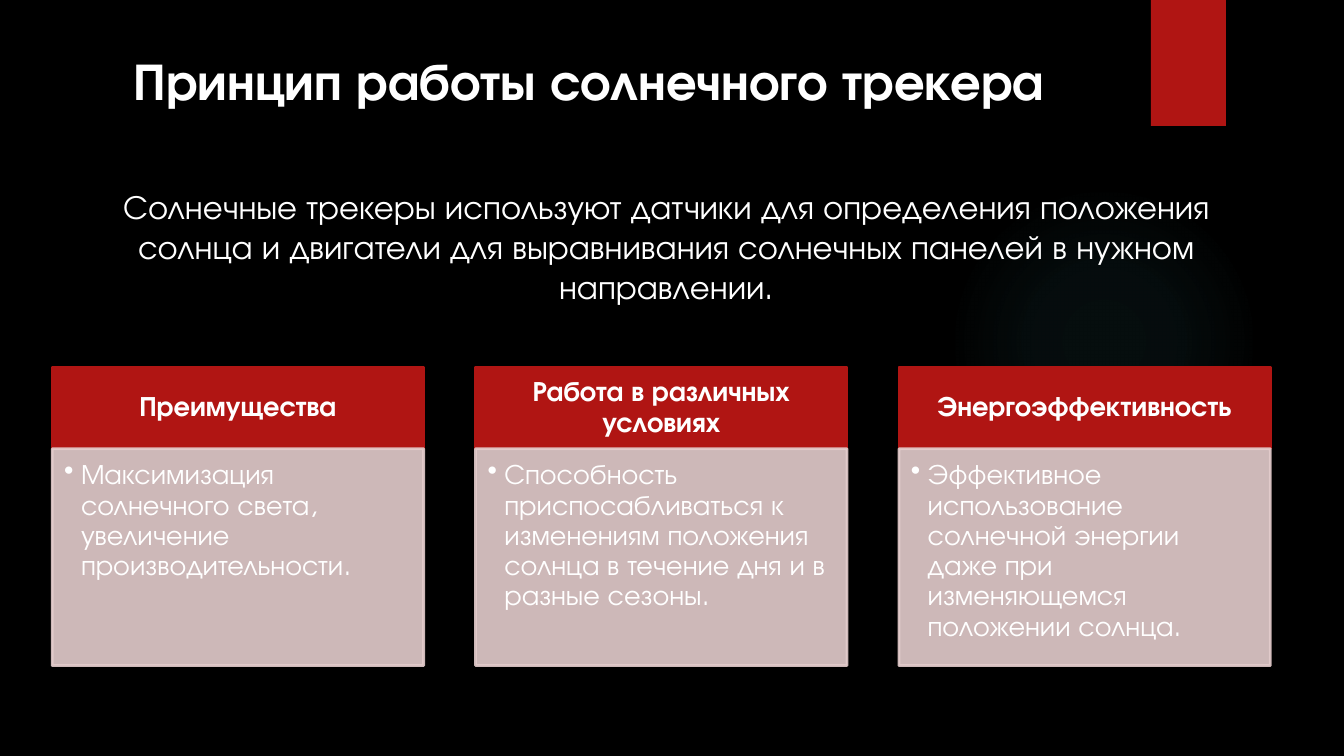
from lxml import etree
from pptx import Presentation
from pptx.dml.color import RGBColor
from pptx.enum import shapes, text
from pptx.oxml import parse_xml
from pptx.oxml.ns import nsdecls, qn
from pptx.util import Pt

FONT = "TeX Gyre Adventor"
RED, PINK, WHITE, GLOW = "B01513", "E4CCCC", "FFFFFF", "50B9C1"


def color(value):
    return RGBColor.from_string(value)


def write(frame, words, size, bold=False, align=text.PP_ALIGN.CENTER):
    frame.word_wrap = True
    paragraph = frame.paragraphs[0]
    paragraph.alignment = align
    run = paragraph.add_run()
    run.text = words
    run.font.name, run.font.size, run.font.bold = FONT, Pt(size), bold
    run.font.color.rgb = color(WHITE)
    return paragraph


deck = Presentation()
deck.slide_width, deck.slide_height = Pt(720), Pt(405)
slide = deck.slides.add_slide(deck.slide_layouts[5])
slide.background.fill.solid()
slide.background.fill.fore_color.rgb = color("000000")

# Faint round glow
glow = slide.shapes.add_shape(shapes.MSO_SHAPE.OVAL, Pt(508.3), Pt(99.4), Pt(166.3), Pt(166.3))
glow.shadow.inherit = False
glow.line.fill.background()
glow.fill.background()
stops = "".join(
    f'<a:gs pos="{place * 1000}"><a:srgbClr val="{GLOW}"><a:alpha val="{alpha * 1000}"/></a:srgbClr></a:gs>'
    for place, alpha in [(0, 7), (36, 6), (69, 0)])
gradient = parse_xml(
    f'<a:gradFill {nsdecls("a")}><a:gsLst>{stops}</a:gsLst><a:path path="circle">'
    '<a:fillToRect l="50000" t="50000" r="50000" b="50000"/></a:path></a:gradFill>')
glow_props = glow._element.spPr
glow_props.replace(glow_props.find(qn("a:noFill")), gradient)

# Red ribbon
ribbon = slide.shapes.add_shape(shapes.MSO_SHAPE.RECTANGLE, Pt(616.5), 0, Pt(40.3), Pt(67.5))
ribbon.shadow.inherit = False
ribbon.fill.solid()
ribbon.fill.fore_color.rgb = color(RED)
ribbon.line.fill.background()

# Title and description
title = slide.shapes.title
title.left, title.top, title.width, title.height = Pt(16.6), Pt(22.3), Pt(598.3), Pt(41)
title.text_frame.vertical_anchor = text.MSO_ANCHOR.TOP
title.text_frame.auto_size = text.MSO_AUTO_SIZE.SHAPE_TO_FIT_TEXT
write(title.text_frame, "Принцип работы солнечного трекера", 28, bold=True)

description = slide.shapes.add_textbox(Pt(33.8), Pt(95.8), Pt(646.6), Pt(51))
description.text_frame.auto_size = text.MSO_AUTO_SIZE.SHAPE_TO_FIT_TEXT
write(description.text_frame,
      "Солнечные трекеры используют датчики для определения положения солнца "
      "и двигатели для выравнивания солнечных панелей в нужном направлении.", 18)

# Three cards: red heading over a translucent body
cards = [
    ("Преимущества", "Максимизация солнечного света, увеличение производительности."),
    ("Работа в различных условиях",
     "Способность приспосабливаться к изменениям положения солнца в течение дня и в разные сезоны."),
    ("Энергоэффективность",
     "Эффективное использование солнечной энергии даже при изменяющемся положении солнца."),
]
CARD_LEFT, CARD_STEP, CARD_WIDTH = 28, 226.8, 199
HEAD_TOP, HEAD_HEIGHT, BODY_HEIGHT = 196.6, 43.8, 116.2

for index, (heading, detail) in enumerate(cards):
    left = CARD_LEFT + index * CARD_STEP
    parts = [
        (heading, HEAD_TOP, HEAD_HEIGHT, RED, (8.5, 5, 8.5, 5), text.MSO_ANCHOR.MIDDLE),
        (detail, HEAD_TOP + HEAD_HEIGHT, BODY_HEIGHT, PINK, (6.4, 6.4, 8.5, 9.6), text.MSO_ANCHOR.TOP),
    ]
    for words, top, height, tint, insets, anchor in parts:
        is_heading = words == heading
        panel = slide.shapes.add_shape(
            shapes.MSO_SHAPE.RECTANGLE, Pt(left), Pt(top), Pt(CARD_WIDTH), Pt(height))
        panel.shadow.inherit = False
        panel.fill.solid()
        panel.fill.fore_color.rgb = color(tint)
        panel.line.color.rgb = color(tint)
        panel.line.width = Pt(1.5)
        frame = panel.text_frame
        frame.margin_left, frame.margin_top, frame.margin_right, frame.margin_bottom = map(Pt, insets)
        frame.vertical_anchor = anchor
        align = text.PP_ALIGN.CENTER if is_heading else text.PP_ALIGN.LEFT
        paragraph = write(frame, words, 15, is_heading, align)
        paragraph.line_spacing = 0.9
        if not is_heading:
            for tone in panel._element.spPr.iter(qn("a:srgbClr")):
                etree.SubElement(tone, qn("a:alpha")).set("val", "90000")
            bullet = paragraph._p.get_or_add_pPr()
            bullet.set("marL", str(Pt(9)))
            bullet.set("indent", str(-Pt(9)))
            etree.SubElement(bullet, qn("a:buChar")).set("char", "•")

deck.save("out.pptx")
